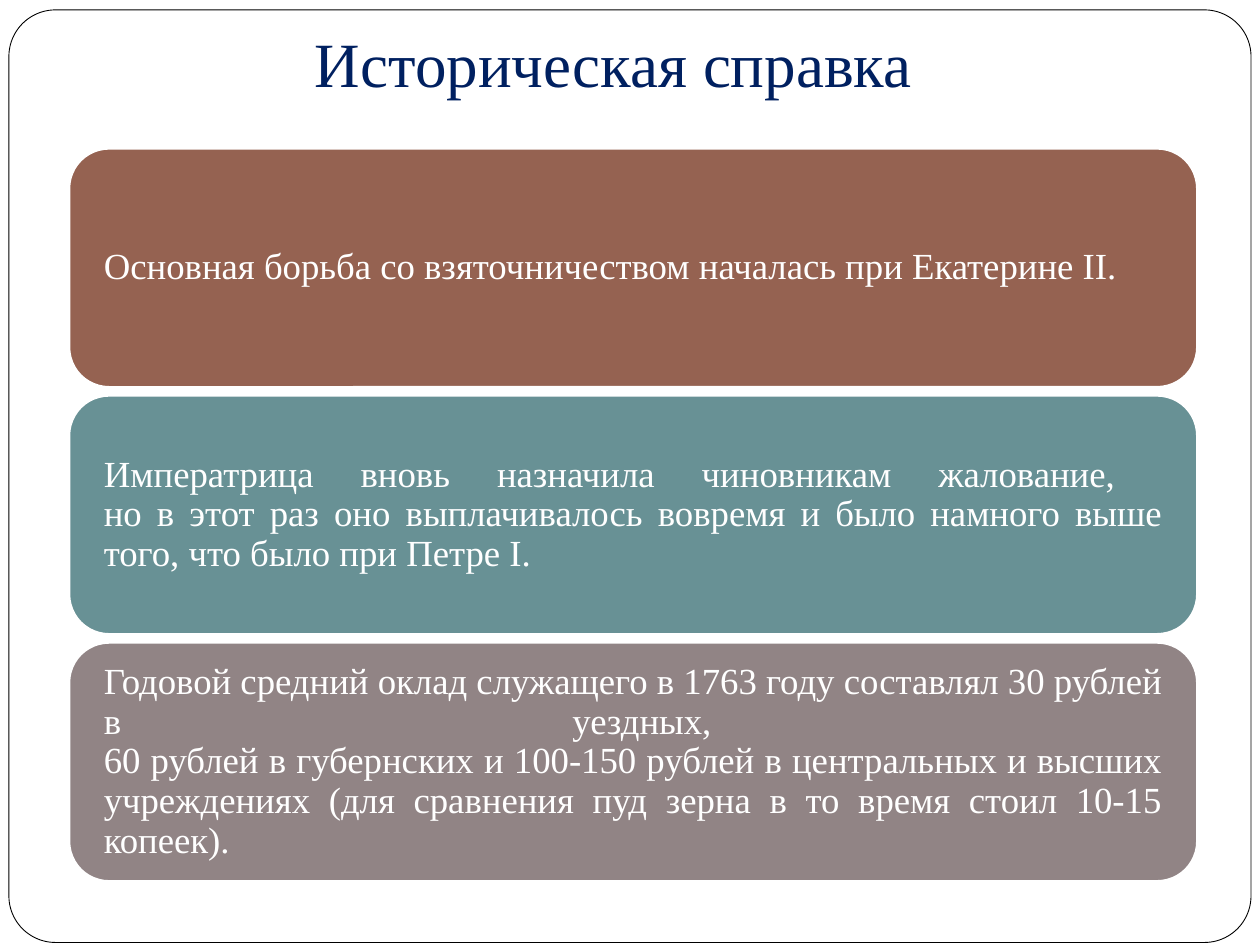
from pptx import Presentation
from pptx.dml.color import RGBColor
from pptx.enum.shapes import MSO_SHAPE
from pptx.enum.text import MSO_ANCHOR, MSO_AUTO_SIZE, PP_ALIGN
from pptx.util import Cm, Pt

ROUNDED = MSO_SHAPE.ROUNDED_RECTANGLE
MIDDLE, BOTTOM = MSO_ANCHOR.MIDDLE, MSO_ANCHOR.BOTTOM
CENTER, JUSTIFY = PP_ALIGN.CENTER, PP_ALIGN.JUSTIFY
NO_AUTOFIT = MSO_AUTO_SIZE.NONE
TITLE_ONLY = 5

FONT = "Times New Roman"
WHITE, BLACK, NAVY = "FFFFFF", "000000", "002060"

CARD_LEFT, CARD_TOP = 1.4, 3.0
CARD_WIDTH, CARD_HEIGHT, CARD_STEP = 22.73, 4.8, 4.98
CARD_MARGIN = Cm(0.46)

CARDS = [
    ("956251", "Основная борьба со взяточничеством началась при Екатерине\u00a0II. "),
    ("689195", "Императрица вновь назначила чиновникам жалование, \v"
               "но в этот раз оно выплачивалось вовремя и было намного выше "
               "того, что было при Петре I."),
    ("918485", "Годовой средний оклад служащего в 1763 году составлял 30 рублей "
               "в уездных, \v60 рублей в губернских и 100-150 рублей в центральных "
               "и высших учреждениях (для сравнения пуд зерна в то время стоил "
               "10-15 копеек). "),
]


def color(value):
    return RGBColor.from_string(value)


def set_values(target, values):
    for name, value in values.items():
        setattr(target, name, value)


def write_text(box, text, size, text_color, alignment, frame_format):
    frame = box.text_frame
    set_values(frame, {"word_wrap": True, "auto_size": NO_AUTOFIT, **frame_format})
    para = frame.paragraphs[0]
    para.text = text
    set_values(para, {"alignment": alignment, "line_spacing": 0.9,
                      "space_before": Pt(0)})
    for span in para.runs:
        set_values(span.font, {"name": FONT, "size": Pt(size)})
        span.font.color.rgb = color(text_color)


def add_rounded_box(page, place, fill, line, line_width):
    box = page.shapes.add_shape(ROUNDED, *map(Cm, place))
    box.shadow.inherit = False
    box.fill.solid()
    box.fill.fore_color.rgb = color(fill)
    box.line.color.rgb = color(line)
    box.line.width = Pt(line_width)
    return box


def add_page_frame(page):
    """Draw the outline of the whole page behind the title."""
    outline = add_rounded_box(page, (0.18, 0.2, 25.04, 18.8), WHITE, BLACK, 0.5)
    outline.adjustments[0] = 0.05
    page.shapes.title.element.addprevious(outline.element)


def format_title(page, text):
    title = page.shapes.title
    set_values(title, {"left": Cm(1), "top": Cm(0.4),
                       "width": Cm(22.73), "height": Cm(1.88)})
    write_text(title, text, 36, NAVY, CENTER, {
        "vertical_anchor": BOTTOM, "margin_left": Cm(0.25),
        "margin_right": Cm(0.25), "margin_top": Cm(0.13),
        "margin_bottom": Cm(0.25)})


def add_card(page, index, fill, text):
    place = (CARD_LEFT, CARD_TOP + index * CARD_STEP, CARD_WIDTH, CARD_HEIGHT)
    card = add_rounded_box(page, place, fill, WHITE, 1)
    write_text(card, text, 21, WHITE, JUSTIFY, {
        "vertical_anchor": MIDDLE, "margin_left": CARD_MARGIN,
        "margin_right": CARD_MARGIN, "margin_top": CARD_MARGIN,
        "margin_bottom": CARD_MARGIN})


def main():
    deck = Presentation()
    set_values(deck, {"slide_width": Cm(25.4), "slide_height": Cm(19.05)})
    page = deck.slides.add_slide(deck.slide_layouts[TITLE_ONLY])
    add_page_frame(page)
    format_title(page, "Историческая справка")
    for index, (fill, text) in enumerate(CARDS):
        add_card(page, index, fill, text)
    deck.save("out.pptx")


if __name__ == "__main__":
    main()
